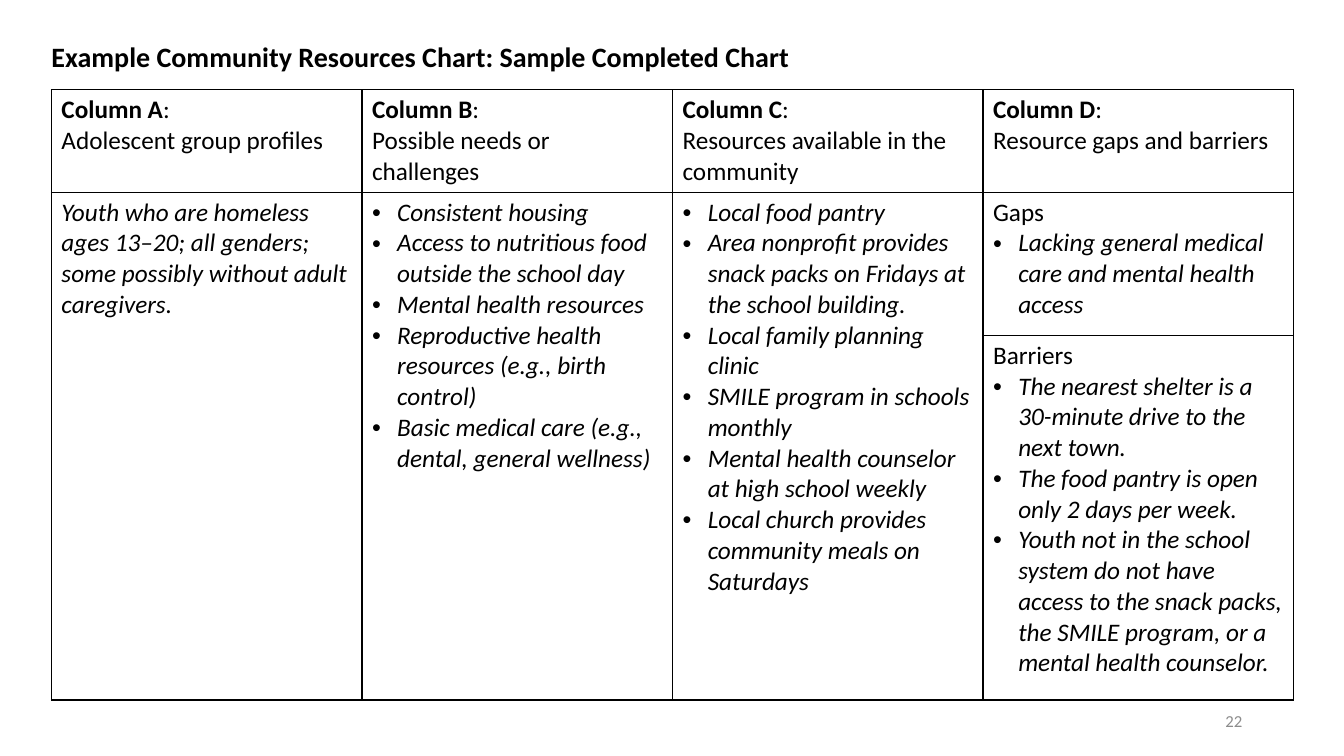
import pptx
import pptx.util
import pptx.dml.color
import pptx.enum.text
import pptx.oxml.ns
from lxml import etree

Inches, Pt = pptx.util.Inches, pptx.util.Pt
BLACK = pptx.dml.color.RGBColor(0x00, 0x00, 0x00)
GRAY = pptx.dml.color.RGBColor(0x8C, 0x8C, 0x8C)
FONT = "Calibri"
COL_W = 3.08
ROW_H = [1.0, 1.42, 3.62]

HEADERS = [
    ("Column A", "Adolescent group profiles"),
    ("Column B", "Possible needs or challenges"),
    ("Column C", "Resources available in the community"),
    ("Column D", "Resource gaps and barriers"),
]

# (row, column): (plain label, italic text, italic bullets)
BODY = {
    (1, 0): ("", "Youth who are homeless ages 13–20; all genders; some possibly "
                 "without adult caregivers.", []),
    (1, 1): ("", "", [
        "Consistent housing",
        "Access to nutritious food outside the school day",
        "Mental health resources",
        "Reproductive health resources (e.g., birth control)",
        "Basic medical care (e.g., dental, general wellness)",
    ]),
    (1, 2): ("", "", [
        "Local food pantry",
        "Area nonprofit provides snack packs on Fridays at the school building.",
        "Local family planning clinic",
        "SMILE program in schools monthly",
        "Mental health counselor at high school weekly",
        "Local church provides community meals on Saturdays",
    ]),
    (1, 3): ("Gaps", "", ["Lacking general medical care and mental health access"]),
    (2, 3): ("Barriers", "", [
        "The nearest shelter is a \v30-minute drive to the next town.",
        "The food pantry is open only 2 days per week.",
        "Youth not in the school system do not have access to the snack packs, "
        "the SMILE program, or a mental health counselor.",
    ]),
}


def set_font(p, size, color=BLACK, bold=None, italic=None):
    p.font.name = FONT
    p.font.size = Pt(size)
    p.font.color.rgb = color
    p.font.bold = bold
    p.font.italic = italic


def add_child(parent, tag, **attrs):
    return etree.SubElement(parent, pptx.oxml.ns.qn(tag), **attrs)


prs = pptx.Presentation()
prs.slide_width, prs.slide_height = Inches(13.33), Inches(7.5)
s = prs.slides.add_slide(prs.slide_layouts[5])

# Title
title = s.shapes.title
title.left, title.top = Inches(0.51), Inches(0.34)
title.width, title.height = Inches(11.24), Inches(0.44)
tf = title.text_frame
tf.text = "Example Community Resources Chart: Sample Completed Chart"
tf.margin_left = 0
tf.vertical_anchor = pptx.enum.text.MSO_ANCHOR.TOP
tf.auto_size = pptx.enum.text.MSO_AUTO_SIZE.NONE
p = tf.paragraphs[0]
p.alignment = pptx.enum.text.PP_ALIGN.LEFT
set_font(p, 20, bold=True)

# Table grid
table = s.shapes.add_table(3, 4, Inches(0.51), Inches(0.89),
                           Inches(4 * COL_W), Inches(sum(ROW_H))).table
table.first_row = table.horz_banding = False
for column in table.columns:
    column.width = Inches(COL_W)
for row, height in zip(table.rows, ROW_H):
    row.height = Inches(height)
for c in range(3):
    table.cell(1, c).merge(table.cell(2, c))

# Cell borders, without fill
for cell in table.iter_cells():
    tcPr = cell._tc.get_or_add_tcPr()
    for side in ("a:lnL", "a:lnR", "a:lnT", "a:lnB"):
        ln = add_child(tcPr, side, w=str(Pt(1)))
        add_child(add_child(ln, "a:solidFill"), "a:srgbClr", val=str(BLACK))
    cell.fill.background()

# Header row
for c, (name, topic) in enumerate(HEADERS):
    p = table.cell(0, c).text_frame.paragraphs[0]
    set_font(p, 18)
    r = p.add_run()
    r.text = name
    r.font.bold = True
    p.add_run().text = ":"
    p.add_line_break()
    p.add_run().text = topic

# Body cells
for (row, col), (label, text, bullets) in BODY.items():
    tf = table.cell(row, col).text_frame
    lines = [(label, False, False), (text, True, False)]
    lines += [(bullet, True, True) for bullet in bullets]
    lines = [line for line in lines if line[0]]
    for i, (line, italic, bulleted) in enumerate(lines):
        p = tf.add_paragraph() if i else tf.paragraphs[0]
        p.text = line
        if bulleted:
            pPr = p._p.get_or_add_pPr()
            pPr.set("marL", str(Inches(0.25)))
            pPr.set("indent", str(-Inches(0.25)))
            add_child(pPr, "a:buFont", typeface="Arial")
            add_child(pPr, "a:buChar", char="•")
        set_font(p, 18, italic=italic)

# Page number
sp = s.shapes.add_textbox(Inches(9.42), Inches(6.95), Inches(3), Inches(0.4))
tf = sp.text_frame
tf.word_wrap = True
tf.vertical_anchor = pptx.enum.text.MSO_ANCHOR.MIDDLE
p = tf.paragraphs[0]
p.text = "22"
p.alignment = pptx.enum.text.PP_ALIGN.RIGHT
set_font(p, 12, GRAY)

prs.save("out.pptx")
